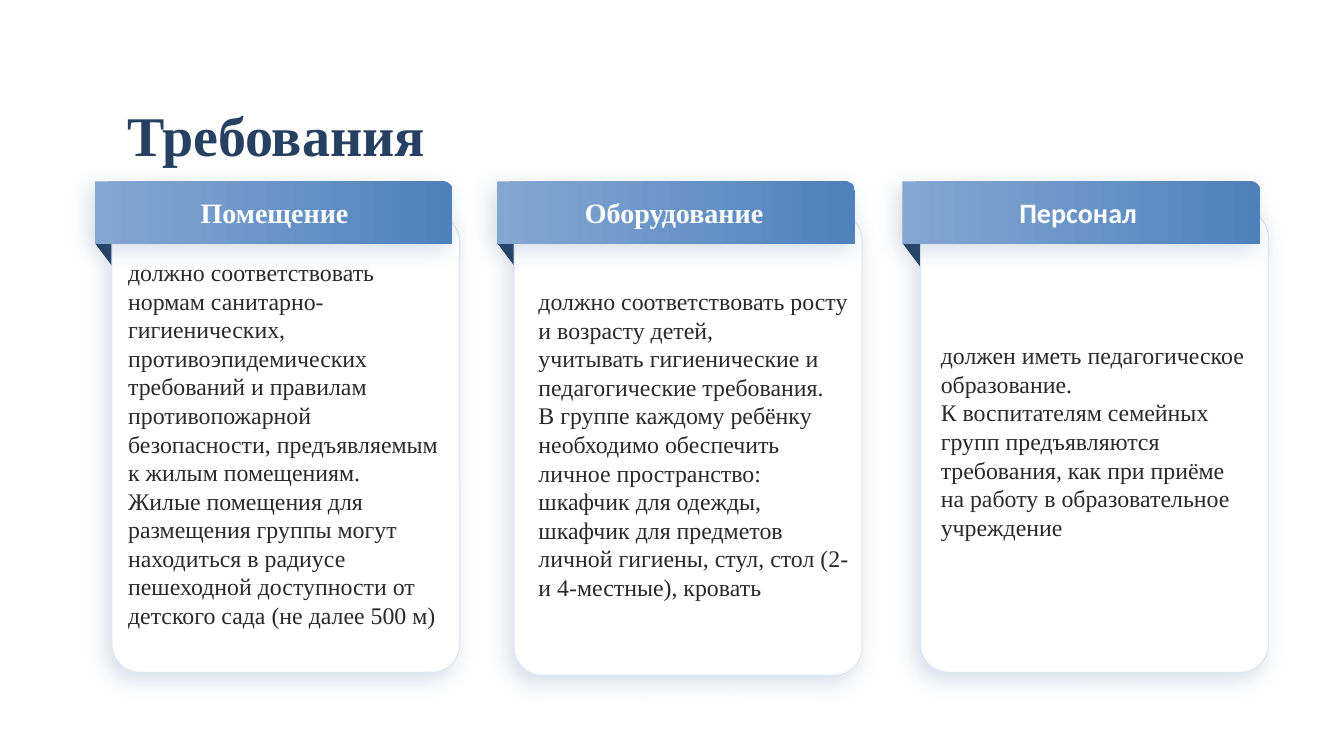
from lxml import etree
from pptx import Presentation
from pptx.dml.color import RGBColor
from pptx.enum import shapes, text
from pptx.oxml.ns import qn
from pptx.util import Emu, Inches, Pt

SERIF = "Times New Roman"
NAVY = "254061"
REQUIREMENTS = [
    dict(left=0.94, card_top=2.13, card_height=4.54, card_offset=0.17,
         insets=(0.08, 0), heading="Помещение", heading_font=SERIF, heading_inset=1.05,
         body=["должно соответствовать нормам санитарно-гигиенических, "
               "противоэпидемических требований и правилам противопожарной "
               "безопасности, предъявляемым к жилым помещениям.",
               "Жилые помещения для размещения группы могут находиться в радиусе "
               "пешеходной доступности от детского сада (не далее 500 м)"]),
    dict(left=4.93, card_top=2.11, card_height=4.59, card_offset=0.17,
         insets=(0.16, 0), heading="Оборудование", heading_font=SERIF, heading_inset=0.87,
         body=["должно соответствовать росту и возрасту детей,",
               "учитывать гигиенические и педагогические требования.",
               "В группе каждому ребёнку необходимо обеспечить личное пространство: "
               "шкафчик для одежды, шкафчик для предметов личной гигиены, "
               "стул, стол (2- и 4-местные), кровать"]),
    dict(left=8.95, card_top=2.08, card_height=4.59, card_offset=0.18,
         insets=(0.12, 0.12), heading="Персонал", heading_font="Calibri", heading_inset=1.16,
         body=["должен иметь педагогическое образование.",
               "К воспитателям семейных групп предъявляются требования, как при "
               "приёме на работу в образовательное учреждение"]),
]


def rgb(value):
    """Turn a hex string into a colour."""
    return RGBColor.from_string(value)


def add_preset(slide, preset, left, top, width, height):
    """Add a preset shape with no outline and no shadow."""
    shape = slide.shapes.add_shape(
        preset, Inches(left), Inches(top), Inches(width), Inches(height))
    shape.shadow.inherit = False
    shape.line.fill.background()
    return shape


def add_soft_shadow(shape):
    """Give a shape a blurred blue shadow to the lower left."""
    effects = shape._element.spPr.find(qn("a:effectLst"))
    shadow = etree.SubElement(
        effects, qn("a:outerShdw"), blurRad=str(Pt(16)), dist=str(Pt(6)),
        dir=str(135 * 60000), algn="tr", rotWithShape="0")
    tint = etree.SubElement(shadow, qn("a:srgbClr"), val="376092")
    etree.SubElement(tint, qn("a:alpha"), val="20000")


def write(shape, paragraphs, font, size, color, bold, insets):
    """Fill a shape with left-aligned, vertically centred paragraphs."""
    frame = shape.text_frame
    frame.word_wrap = True
    frame.vertical_anchor = text.MSO_ANCHOR.MIDDLE
    (frame.margin_left, frame.margin_top,
     frame.margin_right, frame.margin_bottom) = [Inches(inset) for inset in insets]
    frame.text = "\n".join(paragraphs)
    for paragraph in frame.paragraphs:
        paragraph.alignment = text.PP_ALIGN.LEFT
        paragraph.font.name = font
        paragraph.font.size = Pt(size)
        paragraph.font.bold = bold
        paragraph.font.color.rgb = rgb(color)


def add_fold(slide, left):
    """Add the dark folded corner under a ribbon."""
    fold = add_preset(slide, shapes.MSO_SHAPE.RIGHT_TRIANGLE, left, 2.41, 0.21, 0.28)
    fold.rotation = 180
    fold.fill.solid()
    fold.fill.fore_color.rgb = rgb(NAVY)


def add_card(slide, left, top, height, body, insets):
    """Add the white rounded card that holds the requirement."""
    card = add_preset(slide, shapes.MSO_SHAPE.ROUNDED_RECTANGLE, left, top, 3.45, height)
    card.adjustments[0] = 0.08
    card.fill.solid()
    card.fill.fore_color.rgb = rgb("FFFFFF")
    card.line.color.rgb = rgb("DCE6F2")
    card.line.width = Pt(0.75)
    add_soft_shadow(card)
    inset_left, inset_right = insets
    write(card, body, SERIF, 17, "292929", False, (inset_left, 0.39, inset_right, 0.39))


def add_ribbon(slide, left, heading, font, inset):
    """Add the gradient ribbon with the heading."""
    ribbon = add_preset(
        slide, shapes.MSO_SHAPE.ROUND_1_RECTANGLE, left, 1.8, 3.55, 0.62)
    ribbon.fill.gradient()
    ribbon.fill.gradient_angle = 0
    for stop, color in zip(ribbon.fill.gradient_stops, ("84A7D1", "4F81BD")):
        stop.color.rgb = rgb(color)
    add_soft_shadow(ribbon)
    write(ribbon, [heading], font, 20, "FFFFFF", True, (inset, 0.05, 0.1, 0.05))


def add_requirement(slide, item):
    """Add one column: fold, card and ribbon."""
    left = item["left"]
    add_fold(slide, left)
    add_card(slide, left + item["card_offset"], item["card_top"],
             item["card_height"], item["body"], item["insets"])
    add_ribbon(slide, left, item["heading"], item["heading_font"], item["heading_inset"])


def main():
    """Build the requirements slide."""
    deck = Presentation()
    deck.slide_width, deck.slide_height = Inches(13.33), Inches(7.5)
    slide = deck.slides.add_slide(deck.slide_layouts[5])
    title = slide.shapes.title
    title.left, title.top = Inches(1.16), Inches(0.45)
    title.width, title.height = Inches(11.51), Inches(1.76)
    write(title, ["Требования"], SERIF, 40, NAVY, True, (0.1, 0.05, 0.1, 0.05))
    for item in REQUIREMENTS:
        add_requirement(slide, item)
    deck.save("out.pptx")


if __name__ == "__main__":
    main()
